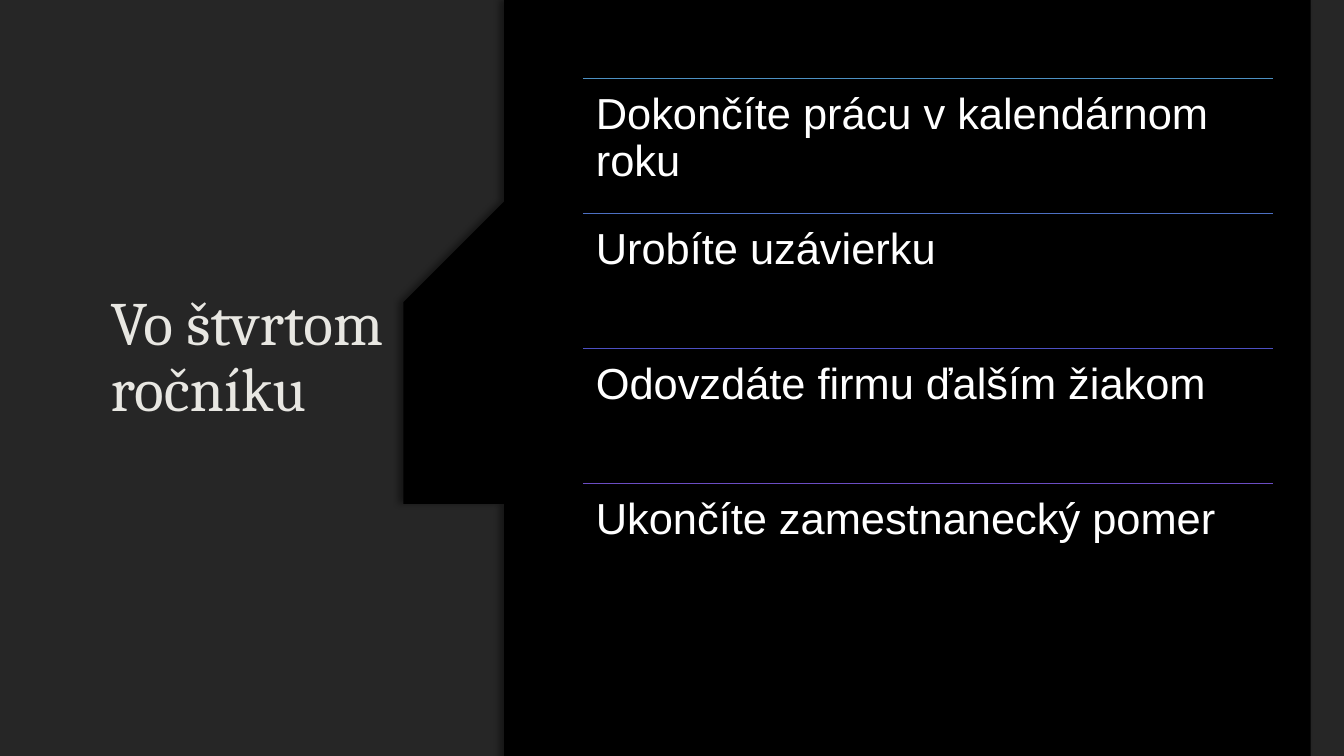
from lxml import etree
from pptx import Presentation
from pptx.dml.color import RGBColor
from pptx.enum.shapes import MSO_CONNECTOR, MSO_SHAPE
from pptx.enum.text import MSO_ANCHOR
from pptx.oxml.ns import qn
from pptx.util import Inches, Pt

COLORS = {
    "background": "000000",
    "panel": "262626",
    "title": "E8E7E2",
    "outline": "404040",
    "text": "FFFFFF",
    "shadow": "000000",
}
STEPS = [
    ("Dokončíte prácu v kalendárnom roku", "4D91C3"),
    ("Urobíte uzávierku", "4D70C3"),
    ("Odovzdáte firmu ďalším žiakom", "4D50C3"),
    ("Ukončíte zamestnanecký pomer", "6B4DC3"),
]
# Curved left edge of the dark area, from bottom to top
CURVE = [
    (4.85, 7.5), (4.77, 7.16), (4.71, 6.82), (4.65, 6.48), (4.6, 6.14),
    (4.56, 5.8), (4.53, 5.46), (4.5, 5.13), (4.49, 4.8), (4.47, 4.48),
    (4.47, 3.54), (4.48, 3.09), (4.5, 2.8), (4.53, 2.39), (4.57, 1.88),
    (4.62, 1.42), (4.67, 1.01), (4.73, 0.66), (4.78, 0.38), (4.85, 0),
]


class SlideBuilder:
    """Holds the style, the list grid and the current slide."""

    width, height = 13.33, 7.5
    column_left, column_width = 5.78, 6.85
    first_row, row_height = 0.78, 1.34

    def __init__(self, deck):
        deck.slide_width, deck.slide_height = Inches(self.width), Inches(self.height)
        self.page = deck.slides.add_slide(deck.slide_layouts[6])
        self.shapes = self.page.shapes

    def color(self, name):
        return RGBColor.from_string(COLORS.get(name, name))

    def row_top(self, row):
        return self.first_row + row * self.row_height

    def background(self, name):
        fill = self.page.background.fill
        fill.solid()
        fill.fore_color.rgb = self.color(name)

    def add_alpha(self, parent, name, percent):
        color = etree.SubElement(parent, qn("a:srgbClr"), val=COLORS[name])
        etree.SubElement(color, qn("a:alpha"), val=str(percent * 1000))

    def shadow(self, properties, percent, blur, distance, angle):
        effects = etree.SubElement(properties, qn("a:effectLst"))
        outer = etree.SubElement(
            effects, qn("a:outerShdw"), blurRad=str(Pt(blur)), dist=str(Pt(distance)),
            dir=str(angle * 60000), algn="ctr", rotWithShape="0")
        self.add_alpha(outer, "shadow", percent)

    def paint(self, shape, name):
        shape.fill.solid()
        shape.fill.fore_color.rgb = self.color(name)
        shape.line.fill.background()

    def panel(self, name):
        panel = self.shapes.add_shape(
            MSO_SHAPE.RECTANGLE, 0, 0, Inches(self.width), Inches(self.height))
        self.paint(panel, name)
        panel.shadow.inherit = False

    def curved_area(self, points, name):
        builder = self.shapes.build_freeform(self.width, 0, scale=Inches(1))
        builder.add_line_segments([(self.width, self.height)] + points, close=True)
        area = builder.convert_to_shape()
        self.paint(area, name)
        self.shadow(area.element.spPr, 40, 4, 3, 180)

    def text(self, text, at, size, font, name, inset=(0.1, 0.05), anchor=MSO_ANCHOR.TOP):
        box = self.shapes.add_textbox(*map(Inches, at))
        frame = box.text_frame
        frame.word_wrap = True
        frame.vertical_anchor = anchor
        frame.margin_left = frame.margin_right = Inches(inset[0])
        frame.margin_top = frame.margin_bottom = Inches(inset[1])
        para = frame.paragraphs[0]
        para.line_spacing = 0.9
        span = para.add_run()
        span.text = text
        span.font.size, span.font.name = Pt(size), font
        span.font.color.rgb = self.color(name)
        return span

    def title(self, text):
        span = self.text(text, (1, 0.67, 3.06, 5.77), 44, "Cambria", "title",
                         anchor=MSO_ANCHOR.MIDDLE)
        properties = span.font._element
        # Faint outline and soft shadow, in schema order around the fill
        outline = etree.Element(qn("a:ln"), w=str(Pt(0.75)))
        self.add_alpha(etree.SubElement(outline, qn("a:solidFill")), "outline", 10)
        properties.insert(0, outline)
        self.shadow(properties, 60, 3, 2, 45)
        properties.insert(2, properties[-1])

    def rule(self, row, name):
        top = Inches(self.row_top(row))
        line = self.shapes.add_connector(
            MSO_CONNECTOR.STRAIGHT, Inches(self.column_left), top,
            Inches(self.column_left + self.column_width), top)
        line.line.color.rgb = self.color(name)
        line.line.width = Pt(0.75)
        self.shadow(line._element.spPr, 60, 5, 2, 90)

    def step(self, row, text, name):
        self.rule(row, name)
        at = (self.column_left, self.row_top(row), self.column_width, self.row_height)
        self.text(text, at, 31, "Arial", "text", inset=(0.13, 0.13))


def main():
    deck = Presentation()
    slide = SlideBuilder(deck)

    # Backdrop and title
    slide.background("background")
    slide.panel("panel")
    slide.title("Vo štvrtom ročníku\u00a0")
    slide.curved_area(CURVE, "background")

    # Ruled list of steps
    for row, (text, name) in enumerate(STEPS):
        slide.step(row, text, name)

    deck.save("out.pptx")


if __name__ == "__main__":
    main()
